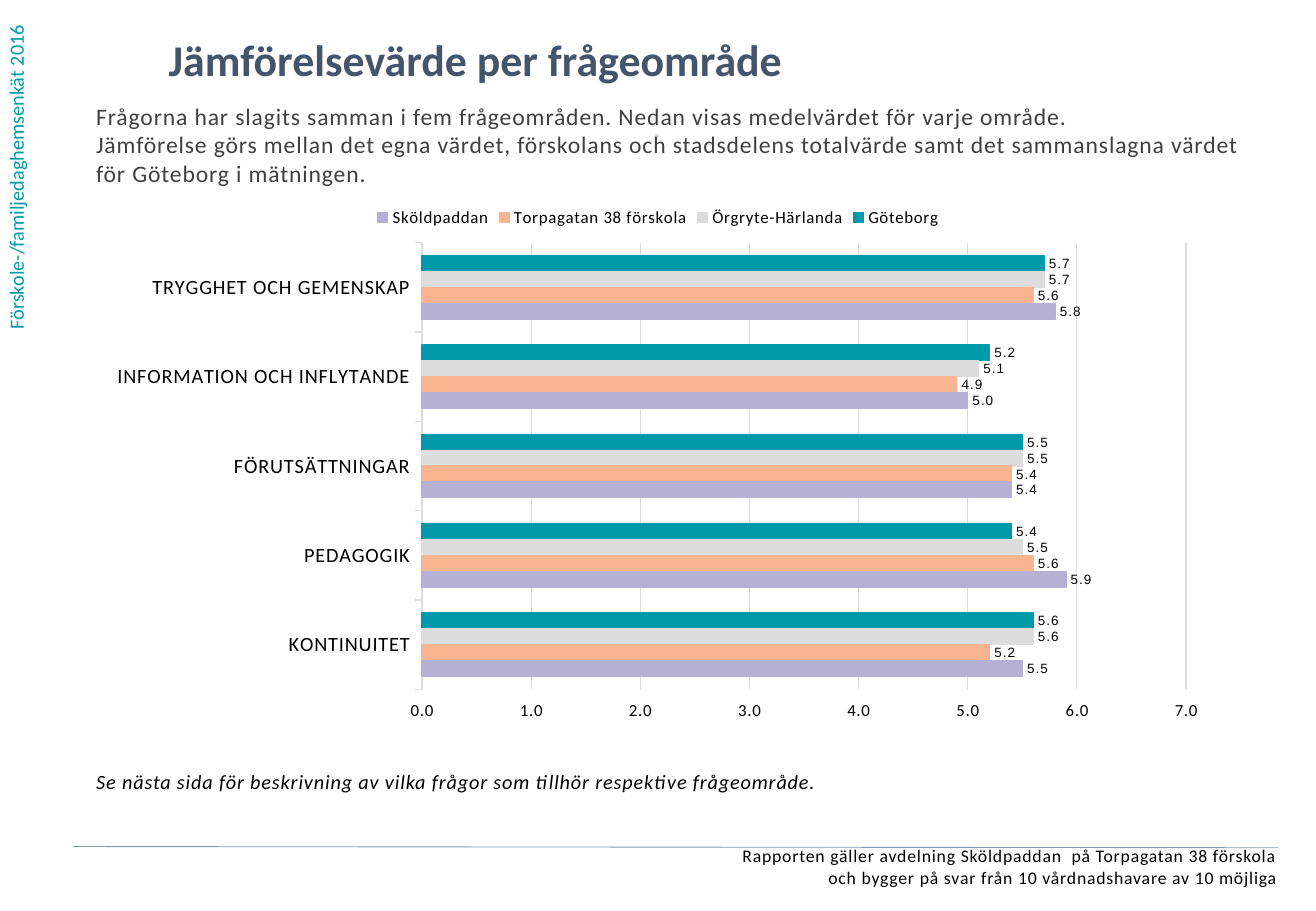
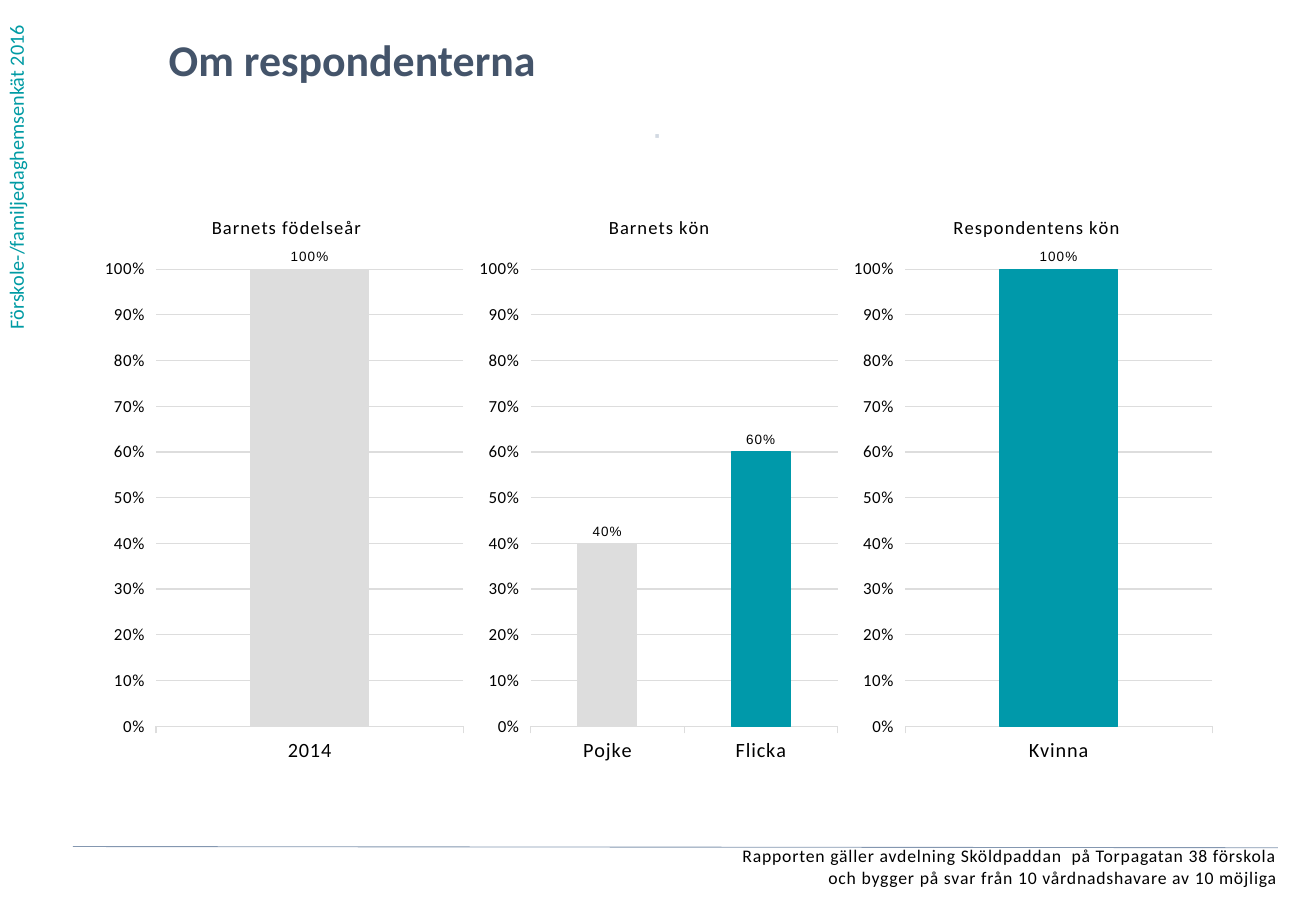
from dataclasses import dataclass

from pptx import Presentation
from pptx.chart.data import CategoryChartData
from pptx.dml.color import RGBColor
from pptx.enum.chart import (XL_CHART_TYPE, XL_LABEL_POSITION, XL_LEGEND_POSITION,
                             XL_TICK_LABEL_POSITION, XL_TICK_MARK)
from pptx.enum.shapes import MSO_CONNECTOR
from pptx.enum.text import MSO_ANCHOR, MSO_AUTO_SIZE, PP_ALIGN
from pptx.oxml import parse_xml
from pptx.oxml.ns import nsdecls, qn
from pptx.util import Pt

BAR, COLUMN = XL_CHART_TYPE.BAR_CLUSTERED, XL_CHART_TYPE.COLUMN_CLUSTERED
LEFT, CENTER, RIGHT = PP_ALIGN.LEFT, PP_ALIGN.CENTER, PP_ALIGN.RIGHT
TICK_OUT, TICK_NONE = XL_TICK_MARK.OUTSIDE, XL_TICK_MARK.NONE
TICK_HIGH = XL_TICK_LABEL_POSITION.HIGH
LABEL_END = XL_LABEL_POSITION.OUTSIDE_END
LEGEND_TOP = XL_LEGEND_POSITION.TOP
STRAIGHT = MSO_CONNECTOR.STRAIGHT
ANCHOR_TOP = MSO_ANCHOR.TOP
NO_FIT = MSO_AUTO_SIZE.NONE


@dataclass(frozen=True)
class Theme:
    font: str = "Calibri"
    label_font: str = "Arial"
    title: str = "44546A"
    side: str = "009BA4"
    body: str = "404040"
    black: str = "000000"
    dot: str = "D2D9E2"
    rule: str = "8497B0"
    teal: str = "0099AA"
    gray: str = "DDDDDD"
    peach: str = "F9B590"
    lilac: str = "B6B1D4"
    title_size: float = 26
    body_size: float = 14
    note_size: float = 12
    foot_size: float = 10.5
    head_size: float = 11
    axis_size: float = 10
    label_size: float = 8
    spacing: str = "50"


THEME = Theme()


@dataclass(frozen=True)
class Box:
    x: float
    y: float
    w: float
    h: float


@dataclass(frozen=True)
class Style:
    size: float
    color: str = THEME.black
    bold: bool = False
    italic: bool = False
    spaced: bool = True
    font: str = THEME.font


@dataclass(frozen=True)
class Series:
    name: str
    values: tuple[float, ...]
    color: str


@dataclass(frozen=True)
class Graph:
    kind: int
    box: Box
    plot: Box  # fractions of the chart area
    form: str
    top: float
    step: float
    cats: tuple[str, ...]
    series: tuple[Series, ...]
    tints: tuple[str, ...] = ()
    head: str = ""
    head_x: float = 0


LEFT_EDGE, FULL = 57, 666
FOOT = ("Rapporten gäller avdelning Sköldpaddan  på Torpagatan 38 förskola",
        "och bygger på svar från 10 vårdnadshavare av 10 möjliga")
INTRO = ("Frågorna har slagits samman i fem frågeområden. "
         "Nedan visas medelvärdet för varje område.",
         "Jämförelse görs mellan det egna värdet, förskolans och stadsdelens "
         "totalvärde samt det sammanslagna värdet för Göteborg i mätningen.")
NOTE = ("Se nästa sida för beskrivning av vilka frågor som tillhör "
        "respektive frågeområde.",)

AREAS = Graph(
    BAR, Box(LEFT_EDGE, 115.2, FULL, 319), Box(0.29, 0.09, 0.68, 0.83),
    "0.0;0.0", 7, 1,
    ("TRYGGHET OCH GEMENSKAP", "INFORMATION OCH INFLYTANDE",
     "FÖRUTSÄTTNINGAR", "PEDAGOGIK", "KONTINUITET"),
    (Series("Göteborg", (5.7, 5.2, 5.5, 5.4, 5.6), THEME.teal),
     Series("Örgryte-Härlanda", (5.7, 5.1, 5.5, 5.5, 5.6), THEME.gray),
     Series("Torpagatan 38 förskola", (5.6, 4.9, 5.4, 5.6, 5.2), THEME.peach),
     Series("Sköldpaddan", (5.8, 5.0, 5.4, 5.9, 5.5), THEME.lilac)))

# Heading, heading offset, categories, shares, point colours
SHARES = (
    ("Barnets födelseår", 0.3, ("2014",), (1,), (THEME.gray,)),
    ("Barnets kön", 0.36, ("Flicka", "Pojke"), (0.6, 0.4),
     (THEME.teal, THEME.gray)),
    ("Respondentens kön", 0.28, ("Kvinna",), (1,), (THEME.teal,)),
)


def set_font(font, style: Style) -> None:
    font.name, font.size = style.font, Pt(style.size)
    font.bold, font.italic = style.bold, style.italic
    font.color.rgb = RGBColor.from_string(style.color)
    if style.spaced:
        font._element.set("spc", THEME.spacing)


def fill_text(frame, lines: tuple[str, ...], style: Style, align=LEFT) -> None:
    para = frame.paragraphs[0]
    para.alignment = align
    for i, line in enumerate(lines):
        if i:
            para.add_line_break()
        run = para.add_run()
        run.text = line
        set_font(run.font, style)


def set_frame(frame) -> None:
    frame.word_wrap = True
    frame.auto_size = NO_FIT
    frame.vertical_anchor = ANCHOR_TOP
    frame.margin_left = frame.margin_right = 0
    frame.margin_top = frame.margin_bottom = 0


def add_text(slide, box: Box, lines: tuple[str, ...], style: Style, align=LEFT):
    shape = slide.shapes.add_textbox(Pt(box.x), Pt(box.y), Pt(box.w), Pt(box.h))
    set_frame(shape.text_frame)
    fill_text(shape.text_frame, lines, style, align)
    return shape


def add_page(deck, title: str):
    """Title, side text, footer and rule that every slide has."""
    slide = deck.slides.add_slide(deck.slide_layouts[5])
    head = slide.shapes.title
    head.left, head.top, head.width, head.height = Pt(100), Pt(19.5), Pt(600), Pt(41)
    set_frame(head.text_frame)
    fill_text(head.text_frame, (title,),
              Style(THEME.title_size, THEME.title, bold=True, spaced=False))

    side = add_text(slide, Box(-1.4, 0, 29, 202.3),
                    ("Förskole-/familjedaghemsenkät 2016",),
                    Style(THEME.note_size, THEME.side, spaced=False))
    frame = side.text_frame
    frame.margin_left = frame.margin_right = Pt(7.2)
    frame.margin_top = frame.margin_bottom = Pt(3.6)
    frame._txBody.bodyPr.set("vert", "vert270")

    add_text(slide, Box(9, 501, 748.3, 31), FOOT, Style(THEME.foot_size), RIGHT)
    add_text(slide, Box(278.6, 73.4, 222, 28), ("⋅",),
             Style(THEME.note_size, THEME.dot, bold=True), CENTER)

    rule = slide.shapes.add_connector(STRAIGHT, Pt(43.2), Pt(501.8),
                                      Pt(757.4), Pt(502.5))
    rule.line.color.rgb = RGBColor.from_string(THEME.rule)
    rule.line.width = Pt(0.5)
    rule._element.spPr.append(parse_xml(f"<a:effectLst {nsdecls('a')}/>"))
    return slide


def set_place(host, index: int, target: str, **parts: float) -> None:
    """Put a manual layout in a chart element."""
    old = host.find(qn("c:layout"))
    if old is not None:
        host.remove(old)
    sizes = "".join(f'<c:{key} val="{val}"/>' for key, val in parts.items())
    host.insert(index, parse_xml(
        f"<c:layout {nsdecls('c')}><c:manualLayout>{target}"
        f'<c:xMode val="edge"/><c:yMode val="edge"/>{sizes}'
        "</c:manualLayout></c:layout>"))


def set_line(line, color: str) -> None:
    line.color.rgb = RGBColor.from_string(color)
    line.width = Pt(0.75)


def paint(part, color: str) -> None:
    part.format.fill.solid()
    part.format.fill.fore_color.rgb = RGBColor.from_string(color)
    set_line(part.format.line, color)


def add_graph(slide, graph: Graph) -> None:
    data = CategoryChartData(number_format=graph.form)
    data.categories = graph.cats
    for item in graph.series:
        data.add_series(item.name, item.values)
    box = graph.box
    chart = slide.shapes.add_chart(graph.kind, Pt(box.x), Pt(box.y),
                                   Pt(box.w), Pt(box.h), data).chart
    set_font(chart.font, Style(THEME.axis_size))

    # Heading and legend
    chart.has_title = bool(graph.head)
    if graph.head:
        fill_text(chart.chart_title.text_frame, (graph.head,),
                  Style(THEME.head_size), CENTER)
        set_place(chart.chart_title._element, 1, "", x=graph.head_x, y=0.03)
    chart.has_legend = len(graph.series) > 1
    if chart.has_legend:
        chart.legend.position = LEGEND_TOP
        chart.legend.include_in_layout = False
        set_font(chart.legend.font, Style(THEME.axis_size))

    # Axes: categories run backwards, so value labels go to the high end
    cat, val = chart.category_axis, chart.value_axis
    cat.reverse_order = True
    cat.major_tick_mark, cat.minor_tick_mark = TICK_OUT, TICK_NONE
    set_line(cat.format.line, THEME.gray)
    set_font(cat.tick_labels.font, Style(THEME.note_size))
    val.minimum_scale, val.maximum_scale = 0, graph.top
    val.major_unit = graph.step
    val.major_tick_mark, val.minor_tick_mark = TICK_OUT, TICK_NONE
    val.tick_label_position = TICK_HIGH
    val.has_major_gridlines = True
    set_line(val.major_gridlines.format.line, THEME.gray)
    val.format.line.fill.background()
    val.tick_labels.number_format = graph.form
    val.tick_labels.number_format_is_linked = False
    set_font(val.tick_labels.font, Style(THEME.axis_size, spaced=False))

    # Bars and their labels
    plot = chart.plots[0]
    plot.gap_width, plot.overlap = 162, 0
    plot.vary_by_categories = False
    for row, item in zip(plot.series, graph.series):
        paint(row, item.color)
        row.invert_if_negative = False
        for i, tint in enumerate(graph.tints):
            paint(row.points[i], tint)
        labels = row.data_labels
        labels.show_value = True
        labels.position = LABEL_END
        labels.number_format = graph.form
        labels.number_format_is_linked = False
        set_font(labels.font, Style(THEME.label_size, font=THEME.label_font))

    area = graph.plot
    set_place(chart._chartSpace.chart.plotArea, 0, '<c:layoutTarget val="inner"/>',
              x=area.x, y=area.y, w=area.w, h=area.h)


def main() -> None:
    deck = Presentation()
    deck.slide_width, deck.slide_height = Pt(780), Pt(540)

    # Mean value for each area
    slide = add_page(deck, "Jämförelsevärde per frågeområde")
    add_text(slide, Box(LEFT_EDGE, 60.3, 690, 54), INTRO,
             Style(THEME.body_size, THEME.body))
    add_text(slide, Box(LEFT_EDGE, 456, FULL, 20), NOTE,
             Style(THEME.note_size, italic=True))
    add_graph(slide, AREAS)

    # Three equal charts about the people who answered
    slide = add_page(deck, "Om respondenterna")
    width = FULL / len(SHARES)
    for i, (head, head_x, cats, values, tints) in enumerate(SHARES):
        add_graph(slide, Graph(
            COLUMN, Box(LEFT_EDGE + i * width, 115, width, 343),
            Box(0.16, 0.13, 0.82, 0.79), "0%;0%", 1, 0.1, cats,
            (Series("Series 1", values, THEME.teal),), tints, head, head_x))

    deck.save("out.pptx")


if __name__ == "__main__":
    main()
